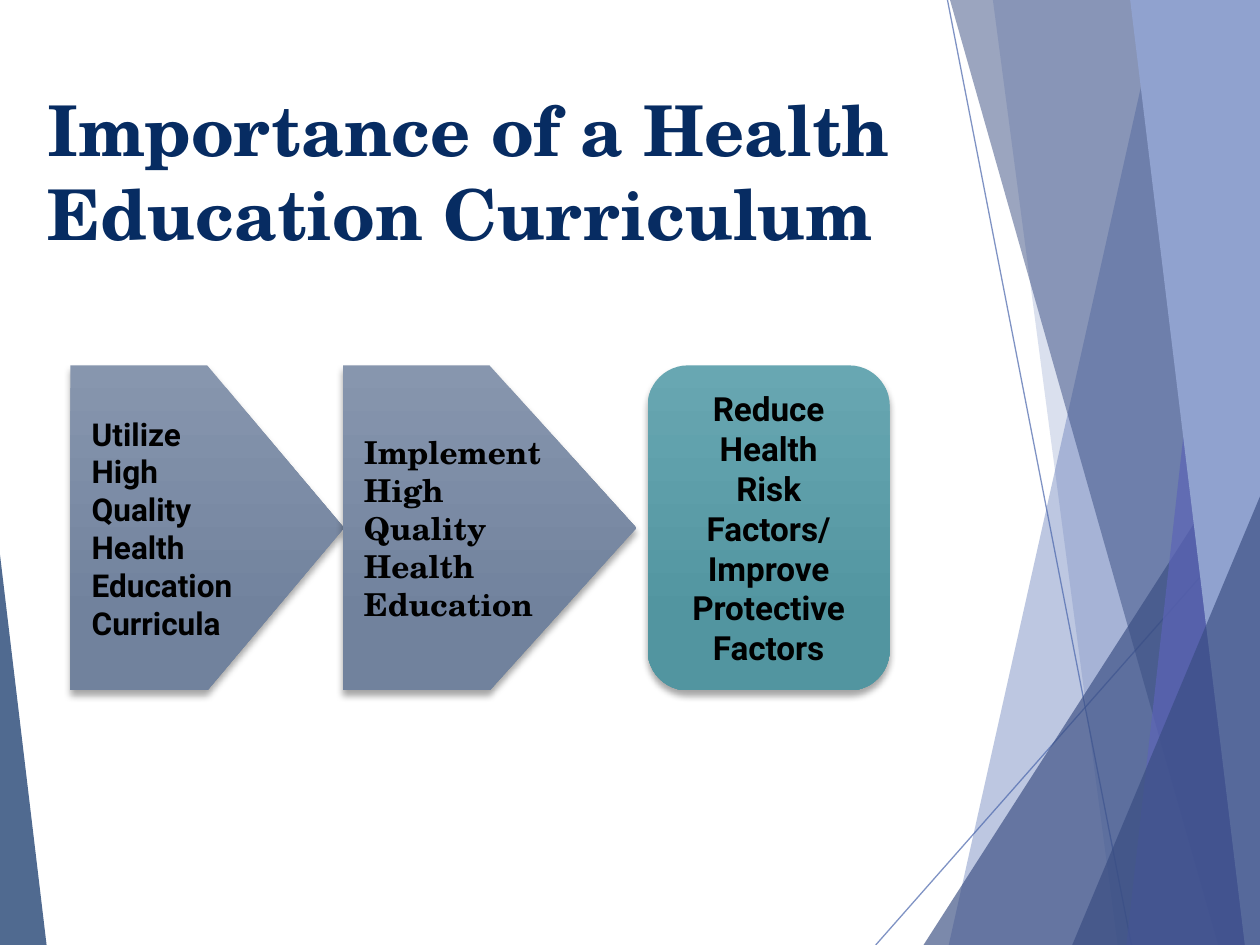
from pptx import Presentation
from pptx.dml.color import RGBColor
from pptx.enum.shapes import MSO_CONNECTOR, MSO_SHAPE
from pptx.enum.text import MSO_ANCHOR, MSO_AUTO_SIZE, PP_ALIGN
from pptx.oxml import parse_xml
from pptx.oxml.ns import nsdecls, qn
from pptx.util import Inches, Pt
from lxml.etree import SubElement

WIDTH, HEIGHT = 10, 7.5
NAVY = RGBColor(0x07, 0x2C, 0x62)
BLUE = RGBColor(0x4A, 0x66, 0xAC)
DEEP_BLUE = RGBColor(0x38, 0x4C, 0x81)
VIOLET = RGBColor(0x5C, 0x64, 0xB7)
LIGHT_BLUE = RGBColor(0x90, 0xA2, 0xCF)
SLATE = (RGBColor(0x87, 0x96, 0xAE), RGBColor(0x71, 0x82, 0x9D))
TEAL = (RGBColor(0x68, 0xA7, 0xB2), RGBColor(0x52, 0x95, 0xA0))
BLACK = RGBColor(0, 0, 0)
SERIF, SANS = "TeX Gyre Schola", "Roboto"


class SlideBuilder:
    def __init__(self, page):
        self.page = page
        self.shapes = page.shapes

    def set_alpha(self, fill, percent):
        color = fill._xPr.find(qn("a:solidFill"))[0]
        SubElement(color, qn("a:alpha")).set("val", str(percent * 1000))

    def paint(self, shape, color, opacity):
        shape.shadow.inherit = False
        shape.line.fill.background()
        shape.fill.solid()
        shape.fill.fore_color.rgb = color
        if opacity < 100:
            self.set_alpha(shape.fill, opacity)

    def line(self, start, end):
        ends = [Inches(value) for value in (*start, *end)]
        connector = self.shapes.add_connector(MSO_CONNECTOR.STRAIGHT, *ends)
        connector.line.width = Pt(0.75)
        connector.line.color.rgb = BLUE
        self.set_alpha(connector.line.fill, 70)
        SubElement(connector._element.spPr, qn("a:effectLst"))

    def facet(self, top, bottom, color, opacity=100):
        """Band from a slanted left edge to the right edge of the slide."""
        corners = [(WIDTH, 0), (WIDTH, HEIGHT), (bottom, HEIGHT)]
        outline = self.shapes.build_freeform(Inches(top), 0)
        outline.add_line_segments([(Inches(x), Inches(y)) for x, y in corners])
        self.paint(outline.convert_to_shape(), color, opacity)

    def triangle(self, left, top, width, apex, color, opacity):
        shape = self.shapes.add_shape(
            MSO_SHAPE.ISOSCELES_TRIANGLE, Inches(left), Inches(top),
            Inches(width), Inches(HEIGHT - top))
        shape.adjustments[0] = apex
        self.paint(shape, color, opacity)

    def style(self, para, font, size, color):
        for span in para.runs:
            span.font.name = font
            span.font.size = Pt(size)
            span.font.bold = True
            span.font.color.rgb = color

    def title(self, text):
        box = self.shapes.title
        box.left, box.top = Inches(0.28), Inches(0.64)
        box.width, box.height = Inches(7.61), Inches(1.18)
        frame = box.text_frame
        frame.text = text
        frame.auto_size = MSO_AUTO_SIZE.NONE
        frame.vertical_anchor = MSO_ANCHOR.TOP
        frame.paragraphs[0].alignment = PP_ALIGN.LEFT
        self.style(frame.paragraphs[0], SERIF, 40, NAVY)

    def step(self, kind, left, width, lines, colors, font, size,
             align=PP_ALIGN.LEFT, indent=0.0):
        box = self.shapes.add_shape(
            kind, Inches(left), Inches(2.9), Inches(width), Inches(2.58))
        box.line.fill.background()
        box.fill.gradient()
        box.fill.gradient_angle = 270
        for stop, color, position in zip(box.fill.gradient_stops, colors, (0, 0.78)):
            stop.color.rgb = color
            stop.position = position
        box._element.spPr.append(parse_xml(
            f'<a:effectLst {nsdecls("a")}>'
            f'<a:outerShdw blurRad="{Pt(4)}" dist="{Pt(3)}" dir="5400000" rotWithShape="0">'
            '<a:srgbClr val="000000"><a:alpha val="35000"/></a:srgbClr>'
            '</a:outerShdw></a:effectLst>'))
        frame = box.text_frame
        frame.word_wrap = True
        frame.vertical_anchor = MSO_ANCHOR.MIDDLE
        frame.margin_left = Inches(0.1)
        frame.margin_right = Inches(0.15)
        if align == PP_ALIGN.CENTER:
            frame.margin_left = frame.margin_right
        frame.text = "\n".join(lines)
        for para in frame.paragraphs:
            para.alignment = align
            if indent:
                para._p.get_or_add_pPr().set("marL", str(Inches(indent)))
            self.style(para, font, size, BLACK)


def main():
    deck = Presentation()
    deck.slide_width, deck.slide_height = Inches(WIDTH), Inches(HEIGHT)
    page = deck.slides.add_slide(deck.slide_layouts[5])
    builder = SlideBuilder(page)

    # Faceted background
    builder.line((7.52, 0), (8.98, HEIGHT))
    builder.line((WIDTH, 4.04), (6.95, HEIGHT))
    builder.facet(9.21, 7.53, BLUE, 36)
    builder.facet(7.88, 8.87, BLUE, 20)
    builder.triangle(7.33, 3.34, 2.67, 1, DEEP_BLUE, 66)
    builder.facet(7.54, 9.67, DEEP_BLUE, 50)
    builder.facet(9.78, 8.94, VIOLET, 70)
    builder.facet(8.97, 9.88, LIGHT_BLUE)
    builder.triangle(8.51, 3.94, 1.49, 1, DEEP_BLUE, 66)
    builder.triangle(0, 4.4, 0.37, 0, NAVY, 70)

    # Title
    builder.title("Importance of a Health Education Curriculum")

    # Process steps
    builder.step(MSO_SHAPE.PENTAGON, 0.56, 2.17,
                 ["Utilize", "High Quality", "Health", "Education", "Curricula"],
                 SLATE, SANS, 18, indent=0.07)
    builder.step(MSO_SHAPE.PENTAGON, 2.72, 2.33,
                 ["Implement", "High Quality", "Health", "Education"],
                 SLATE, SERIF, 18, indent=0.07)
    builder.step(MSO_SHAPE.ROUNDED_RECTANGLE, 5.14, 1.92,
                 ["Reduce Health", "Risk Factors/", "Improve", "Protective", "Factors"],
                 TEAL, SANS, 19, align=PP_ALIGN.CENTER)

    deck.save("out.pptx")


if __name__ == "__main__":
    main()
